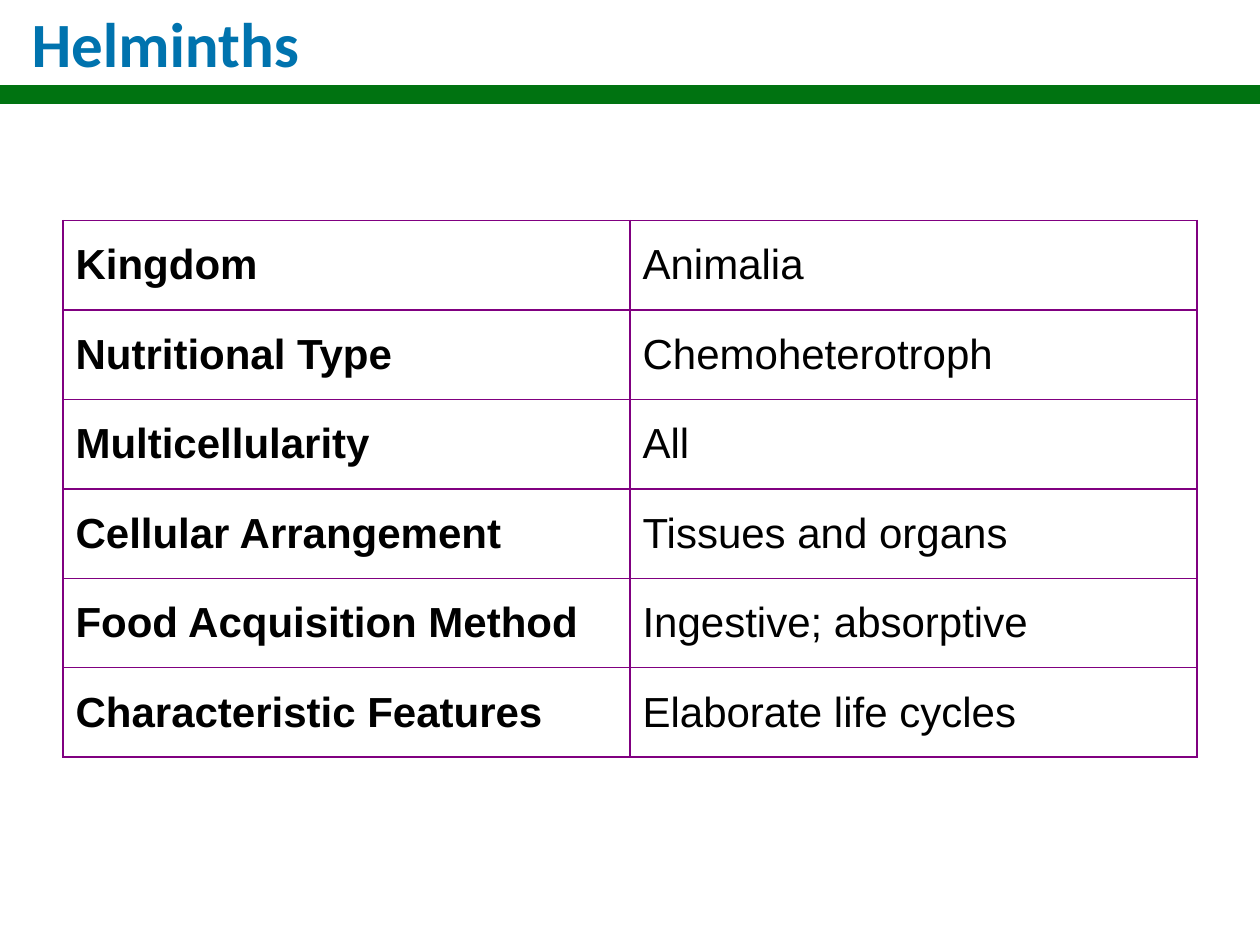
from dataclasses import dataclass
from lxml import etree
from pptx import Presentation
from pptx import util as u
from pptx.dml.color import RGBColor
from pptx.enum import shapes, text
from pptx.oxml import ns


@dataclass
class Theme:
    title_color: RGBColor = RGBColor(0x00, 0x73, 0xAE)
    bar_color: RGBColor = RGBColor(0x00, 0x73, 0x11)
    text_color: RGBColor = RGBColor(0x00, 0x00, 0x00)
    border_color: str = "800080"
    border_width: int = u.Pt(1)
    title_font: str = "Calibri"
    table_font: str = "Arial"
    title_size: int = u.Pt(36)
    table_size: int = u.Pt(24)


def set_font(paragraph, name, size, color, bold):
    font = paragraph.font
    font.name, font.size, font.bold = name, size, bold
    font.color.rgb = color


def add_borders(cell, color, width):
    properties = cell._tc.get_or_add_tcPr()
    for side in ("lnL", "lnR", "lnT", "lnB"):
        line = etree.SubElement(properties, ns.qn(f"a:{side}"), w=str(width))
        fill = etree.SubElement(line, ns.qn("a:solidFill"))
        etree.SubElement(fill, ns.qn("a:srgbClr"), val=color)


theme = Theme()
presentation = Presentation()
presentation.slide_width = u.Inches(10)
presentation.slide_height = u.Inches(7.5)
width, height = presentation.slide_width, presentation.slide_height
slide = presentation.slides.add_slide(presentation.slide_layouts[5])

bar = slide.shapes.add_shape(
    shapes.MSO_SHAPE.RECTANGLE, 0, int(height * 0.09), width, int(height * 0.02))
bar.shadow.inherit = False
bar.fill.solid()
bar.fill.fore_color.rgb = theme.bar_color
bar.line.fill.background()

rows = [
    ("Kingdom", "Animalia"),
    ("Nutritional Type", "Chemoheterotroph"),
    ("Multicellularity", "All"),
    ("Cellular Arrangement", "Tissues and organs"),
    ("Food Acquisition Method", "Ingestive; absorptive"),
    ("Characteristic Features", "Elaborate life cycles"),
]
margin = int(width * 0.05)
row_height = u.Inches(0.71)
table = slide.shapes.add_table(
    len(rows), 2, margin, u.Inches(1.75),
    width - 2 * margin, row_height * len(rows)).table
table.first_row = table.horz_banding = False
for row_index, row in enumerate(rows):
    for column_index, wording in enumerate(row):
        cell = table.cell(row_index, column_index)
        cell.text = wording
        cell.vertical_anchor = text.MSO_ANCHOR.MIDDLE
        add_borders(cell, theme.border_color, theme.border_width)
        cell.fill.background()
        set_font(cell.text_frame.paragraphs[0], theme.table_font,
                 theme.table_size, theme.text_color, column_index == 0)

title = slide.shapes.title
title.left, title.top = int(width * 0.025), 0
title.width, title.height = int(width * 0.95), int(height * 0.1)
frame = title.text_frame
frame.text = "Helminths"
frame.margin_left = frame.margin_right = frame.margin_top = frame.margin_bottom = 0
frame.vertical_anchor = text.MSO_ANCHOR.MIDDLE
frame.auto_size = text.MSO_AUTO_SIZE.NONE
paragraph = frame.paragraphs[0]
paragraph.alignment = text.PP_ALIGN.LEFT
paragraph.line_spacing = 0.9
set_font(paragraph, theme.title_font, theme.title_size, theme.title_color, True)
slide.shapes._spTree.append(title._element)

presentation.save("out.pptx")
